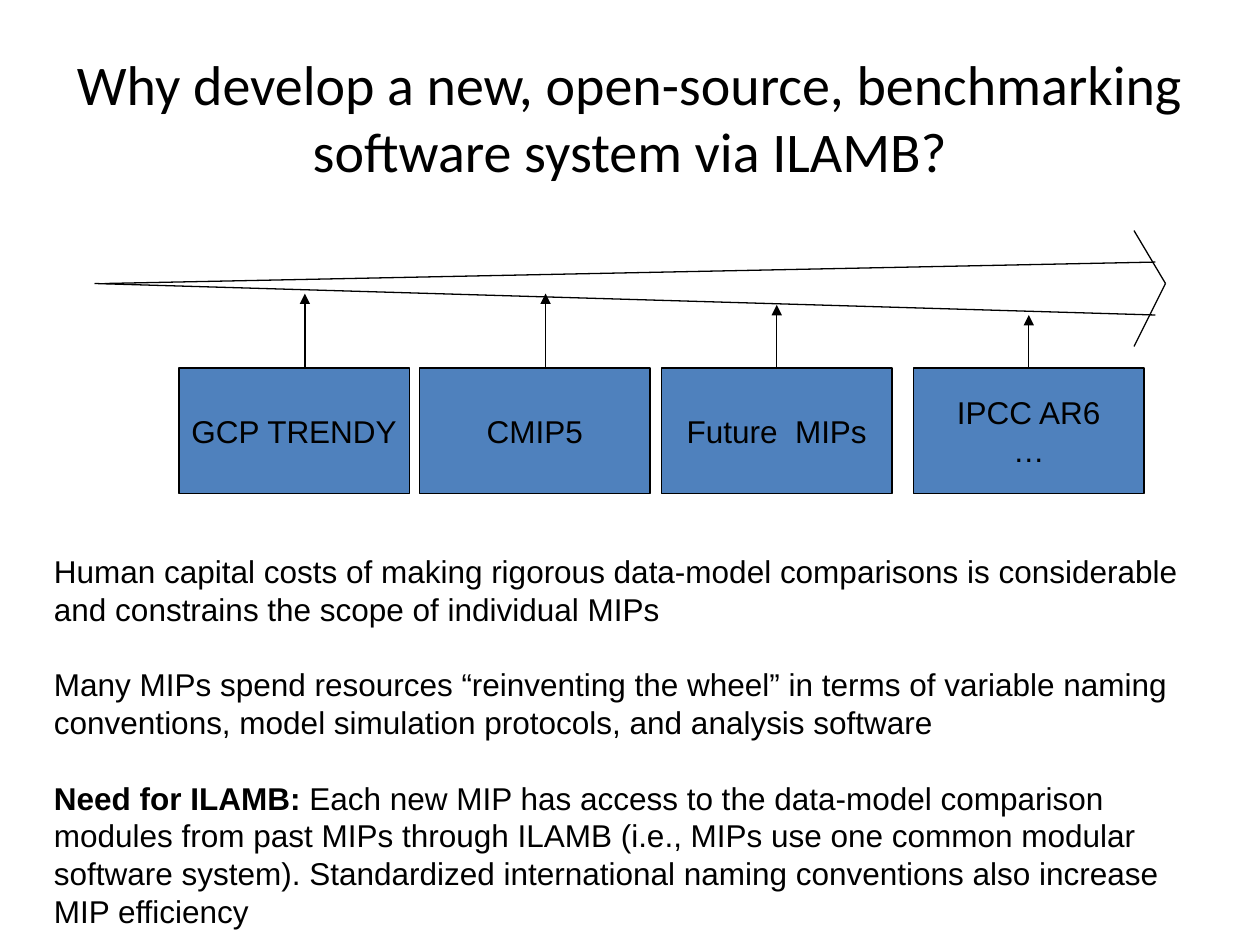
import pptx
import pptx.util
import pptx.dml.color
import pptx.enum.shapes
import pptx.enum.text
import pptx.oxml.ns
import lxml.etree

Inches = pptx.util.Inches
Pt = pptx.util.Pt
ALIGN = pptx.enum.text.PP_ALIGN
ANCHOR = pptx.enum.text.MSO_ANCHOR
BLACK = "000000"
BLUE = "4F81BD"
BODY_SIZE = 18

# label lines, box left, arrow x, arrow tip y (relative to the row), joined to box
STAGES = [
    (["GCP TRENDY"], 0, 1, -0.59, False),
    (["CMIP5"], 1.91, 2.91, -0.59, False),
    (["Future  MIPs"], 3.83, 4.75, -0.5, True),
    (["IPCC AR6", "…"], 5.83, 6.75, -0.42, True),
]

# each paragraph is a list of (text, bold) runs
REASONS = [
    [("Human capital costs of making rigorous data-model comparisons is "
      "considerable and constrains the scope of individual MIPs", False)],
    [("Many MIPs spend resources “reinventing the wheel” in terms of variable "
      "naming conventions, model simulation protocols, and analysis software",
      False)],
    [("Need for ILAMB: ", True),
     ("Each new MIP has access to the data-model comparison modules from past "
      "MIPs through ILAMB (i.e., MIPs use one common modular software system). "
      "Standardized international naming conventions also increase MIP "
      "efficiency", False)],
]


def color(code):
    return pptx.dml.color.RGBColor.from_string(code)


def write(frame, paras, size, font, align, gap=0):
    """Fill a text frame with paragraphs of (text, bold) runs."""
    for i, runs in enumerate(paras):
        para = frame.add_paragraph() if i else frame.paragraphs[0]
        para.alignment = align
        if i and gap:
            para.space_before = Pt(gap)
        for text, bold in runs:
            run = para.add_run()
            run.text = text
            run.font.size = Pt(size)
            run.font.name = font
            run.font.bold = bold
            run.font.color.rgb = color(BLACK)


def add_line(slide, start, end, head=False):
    line = slide.shapes.add_connector(
        pptx.enum.shapes.MSO_CONNECTOR.STRAIGHT,
        *(Inches(n) for n in start + end))
    line.line.color.rgb = color(BLACK)
    line.line.width = Pt(0.75)
    if head:
        tip = lxml.etree.SubElement(line.line._get_or_add_ln(),
                                    pptx.oxml.ns.qn("a:tailEnd"))
        tip.set("type", "triangle")
    lxml.etree.SubElement(line._element.spPr, pptx.oxml.ns.qn("a:effectLst"))
    return line


def add_text(slide, left, top, width, height):
    box = slide.shapes.add_textbox(Inches(left), Inches(top),
                                   Inches(width), Inches(height))
    box.text_frame.word_wrap = True
    return box.text_frame


def add_title(slide, left, top, width, height):
    frame = add_text(slide, left, top, width, height)
    frame.vertical_anchor = ANCHOR.MIDDLE
    title = "Why develop a new, open-source, benchmarking software system via ILAMB?"
    write(frame, [[(title, False)]], 32, "Calibri", ALIGN.CENTER)


def add_wedge(slide, left, top, width, height):
    """Draw the widening time arrow from four open lines."""
    right, mid = left + width, top + 0.42
    neck, barb = right - 0.08, right - 0.25
    add_line(slide, (left, mid), (neck, mid + 0.25))
    add_line(slide, (left + 0.08, mid), (neck, mid - 0.17))
    add_line(slide, (barb, top), (right, mid))
    add_line(slide, (right, mid), (barb, top + height))


def add_stages(slide, left, top, width, height):
    """Draw the project boxes, each with an arrow up to the wedge."""
    for lines, x, stem, tip, joined in STAGES:
        box = slide.shapes.add_shape(
            pptx.enum.shapes.MSO_SHAPE.RECTANGLE,
            Inches(left + x), Inches(top), Inches(width), Inches(height))
        box.shadow.inherit = False
        box.fill.solid()
        box.fill.fore_color.rgb = color(BLUE)
        box.line.color.rgb = color(BLACK)
        box.line.width = Pt(0.75)
        frame = box.text_frame
        frame.word_wrap = False
        frame.vertical_anchor = ANCHOR.MIDDLE
        write(frame, [[(line, False)] for line in lines],
              BODY_SIZE, "Arial", ALIGN.CENTER)
        arrow = add_line(slide, (left + stem, top), (left + stem, top + tip), True)
        if joined:
            arrow.begin_connect(box, 0)
            arrow.end_x = arrow.begin_x


def add_reasons(slide, left, top, width, height):
    frame = add_text(slide, left, top, width, height)
    write(frame, REASONS, BODY_SIZE, "Arial", ALIGN.LEFT, gap=21.6)


def main():
    deck = pptx.Presentation()
    deck.slide_width = Inches(10)
    deck.slide_height = Inches(7.5)
    slide = deck.slides.add_slide(deck.slide_layouts[6])
    add_title(slide, 0.5, 0.3, 9, 1.25)
    add_wedge(slide, 0.75, 1.83, 8.5, 0.92)
    add_stages(slide, 1.42, 2.92, 1.83, 1)
    add_reasons(slide, 0.33, 4.33, 9.42, 3.13)
    deck.save("out.pptx")


if __name__ == "__main__":
    main()
